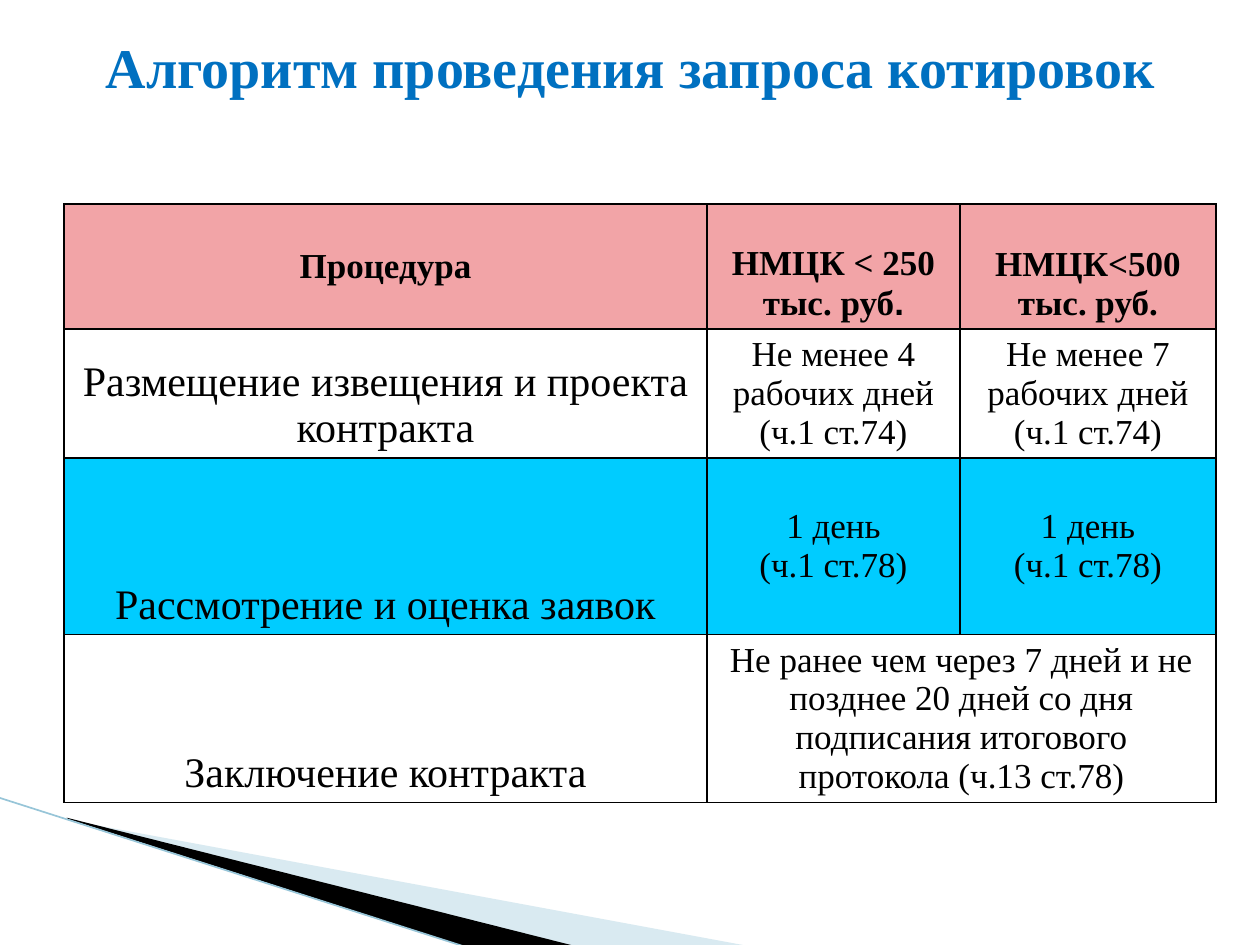
from lxml.etree import SubElement
from pptx import Presentation
from pptx.dml.color import RGBColor
from pptx.enum.shapes import MSO_CONNECTOR
from pptx.enum.text import MSO_ANCHOR, MSO_AUTO_SIZE, PP_ALIGN
from pptx.oxml.ns import qn
from pptx.util import Inches, Pt

BLACK = RGBColor(0x00, 0x00, 0x00)
TITLE_BLUE = RGBColor(0x00, 0x70, 0xC0)
PINK = RGBColor(0xF2, 0xA4, 0xA7)
CYAN = RGBColor(0x00, 0xCC, 0xFF)
PALE_BLUE = RGBColor(0xA0, 0xCB, 0xDC)
LINE_BLUE = RGBColor(0x97, 0xC5, 0xD8)
FONT = "Times New Roman"


def style_text(p, size, color, bold):
    p.alignment = PP_ALIGN.CENTER
    for r in p.runs:
        r.font.name = FONT
        r.font.size = Pt(size)
        r.font.bold = bold
        r.font.color.rgb = color


def add_borders(cell):
    tc_pr = cell._tc.get_or_add_tcPr()
    for side in ("a:lnL", "a:lnR", "a:lnT", "a:lnB"):
        ln = SubElement(tc_pr, qn(side), w=str(Pt(1)))
        fill = SubElement(ln, qn("a:solidFill"))
        SubElement(fill, qn("a:srgbClr"), val=str(BLACK))


prs = Presentation()
prs.slide_width, prs.slide_height = Inches(10), Inches(7.5)
s = prs.slides.add_slide(prs.slide_layouts[6])

# Corner wedges
wedges = [
    ([(0.55, 6.51), (5.95, 7.51), (4.56, 7.51), (0.55, 6.5)], PALE_BLUE, 40),
    ([(0.53, 6.49), (4.57, 7.51), (3.72, 7.52), (0.54, 6.5)], BLACK, 100),
]
for points, color, opacity in wedges:
    corners = [(Inches(x), Inches(y)) for x, y in points]
    builder = s.shapes.build_freeform(*corners[0])
    builder.add_line_segments(corners[1:])
    sp = builder.convert_to_shape()
    sp.shadow.inherit = False
    sp.line.fill.background()
    sp.fill.solid()
    sp.fill.fore_color.rgb = color
    if opacity < 100:
        clr = sp._element.spPr.find(qn("a:solidFill"))[0]
        SubElement(clr, qn("a:alpha"), val=str(opacity * 1000))

# Corner line
line = s.shapes.add_connector(MSO_CONNECTOR.STRAIGHT, Inches(-0.01), Inches(6.33),
                              Inches(3.71), Inches(7.52))
line.line.color.rgb = LINE_BLUE
line.line.width = Pt(0.95)
SubElement(line._element.spPr, qn("a:effectLst"))

# Table of procedures and deadlines
rows = [
    ["Процедура", "НМЦК < 250 тыс. руб.", "НМЦК<500 тыс. руб."],
    ["Размещение извещения и проекта контракта",
     "Не менее 4 рабочих дней\n(ч.1 ст.74)", "Не менее 7 рабочих дней\n(ч.1 ст.74)"],
    ["Рассмотрение и оценка заявок", "1 день\n(ч.1 ст.78)", "1 день\n(ч.1 ст.78)"],
    ["Заключение контракта",
     "Не ранее чем через 7 дней и не позднее 20 дней со дня подписания "
     "итогового протокола (ч.13 ст.78)", ""],
]
widths = [5.1, 2.01, 2.03]
heights = [0.99, 1.02, 1.4, 1.33]
row_fills = [PINK, None, CYAN, None]
middle_cells = {(0, 0), (2, 1), (2, 2)}

table = s.shapes.add_table(len(rows), len(widths), Inches(0.51), Inches(1.62),
                           Inches(sum(widths)), Inches(sum(heights))).table
table.first_row = table.horz_banding = False
for col, width in zip(table.columns, widths):
    col.width = Inches(width)
for i, texts in enumerate(rows):
    table.rows[i].height = Inches(heights[i])
    for j, text in enumerate(texts):
        cell = table.cell(i, j)
        add_borders(cell)
        if row_fills[i] is None:
            cell.fill.background()
        else:
            cell.fill.solid()
            cell.fill.fore_color.rgb = row_fills[i]
        middle = (i, j) in middle_cells
        cell.vertical_anchor = MSO_ANCHOR.MIDDLE if middle else MSO_ANCHOR.BOTTOM
        cell.text_frame.text = text
        size = 24 if i > 0 and j == 0 else 20
        for p in cell.text_frame.paragraphs:
            style_text(p, size, BLACK, i == 0)
table.cell(0, 1).text_frame.paragraphs[0].runs[0].text = "НМЦК < 250 тыс. руб"
dot = table.cell(0, 1).text_frame.paragraphs[0].add_run()
dot.text = "."
style_text(table.cell(0, 1).text_frame.paragraphs[0], 20, BLACK, True)
dot.font.name = "Arial"
table.cell(3, 1).merge(table.cell(3, 2))

# Title
tf = s.shapes.add_textbox(Inches(0.2), Inches(0.21), Inches(9.61), Inches(0.64)).text_frame
tf.word_wrap = True
tf.auto_size = MSO_AUTO_SIZE.SHAPE_TO_FIT_TEXT
tf.text = "Алгоритм проведения запроса котировок"
style_text(tf.paragraphs[0], 32, TITLE_BLUE, True)

prs.save("out.pptx")
